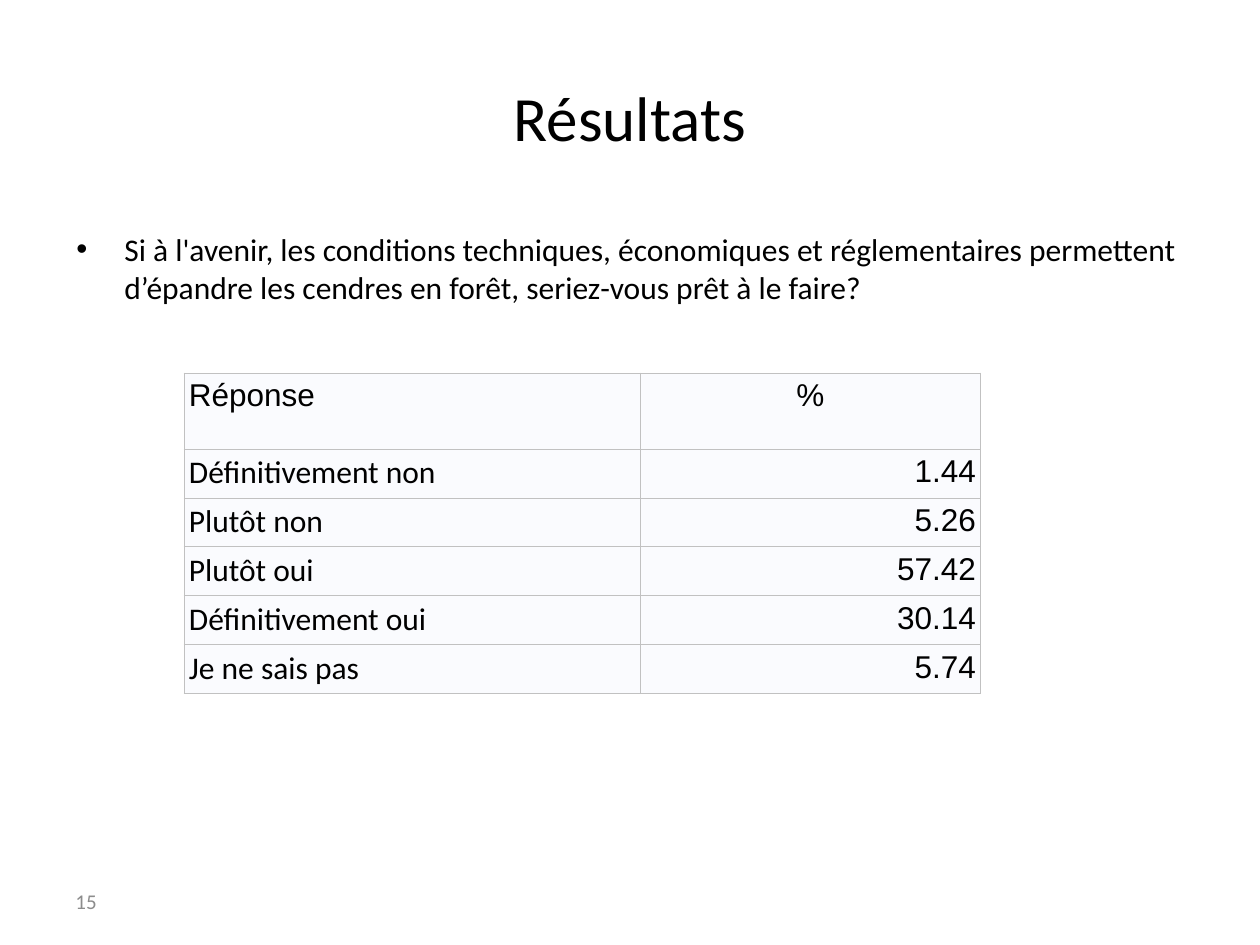
"""Build the survey results slide with its answer table."""
import pptx
import pptx.util
import pptx.dml.color
import pptx.enum.text
import pptx.oxml.ns
import lxml.etree

SCALE = 914400 // 126
ALIGN = pptx.enum.text.PP_ALIGN
ANCHOR = pptx.enum.text.MSO_ANCHOR
ROWS = [
    ("Réponse", "%"),
    ("Définitivement non", "1.44"),
    ("Plutôt non", "5.26"),
    ("Plutôt oui", "57.42"),
    ("Définitivement oui", "30.14"),
    ("Je ne sais pas", "5.74"),
]


def px(count):
    return pptx.util.Emu(count * SCALE)


def color(code):
    return pptx.dml.color.RGBColor.from_string(code)


def child(node, tag, **attrs):
    return lxml.etree.SubElement(node, pptx.oxml.ns.qn(tag), **attrs)


def add_run(para, text, size, font="Calibri", ink="000000"):
    run = para.add_run()
    run.text = text
    run.font.size = pptx.util.Pt(size)
    run.font.name = font
    run.font.color.rgb = color(ink)


def add_text(slide, box, text, size, ink="000000", align=ALIGN.LEFT, anchor=ANCHOR.MIDDLE):
    frame = slide.shapes.add_textbox(*map(px, box)).text_frame
    frame.word_wrap = True
    frame.vertical_anchor = anchor
    para = frame.paragraphs[0]
    para.alignment = align
    add_run(para, text, size, ink=ink)
    return para


def add_bullet(para, indent):
    para.space_before = pptx.util.Pt(3.6)
    props = para._p.get_or_add_pPr()
    props.set("marL", str(px(indent)))
    props.set("indent", str(px(-indent)))
    child(props, "a:buFont", typeface="Arial")
    child(props, "a:buChar", char="•")


def add_edges(cell, ink, width):
    props = cell._tc.get_or_add_tcPr()
    for spot, side in enumerate(("L", "R", "T", "B")):
        line = child(props, f"a:ln{side}", w=str(pptx.util.Pt(width)))
        child(child(line, "a:solidFill"), "a:srgbClr", val=ink)
        props.insert(spot, line)


def fill_cell(cell, text, font, align):
    cell.margin_left = cell.margin_right = px(5)
    cell.margin_top = cell.margin_bottom = px(5)
    cell.fill.solid()
    cell.fill.fore_color.rgb = color("FAFBFE")
    para = cell.text_frame.paragraphs[0]
    para.alignment = align
    add_run(para, text, 18, font)
    add_edges(cell, "C1C1C1", 0.6)


def add_table(slide, left, top, widths, heights):
    box = map(px, (left, top, sum(widths), sum(heights)))
    table = slide.shapes.add_table(len(heights), len(widths), *box).table
    table.first_row = table.horz_banding = False
    for col, width in zip(table.columns, widths):
        col.width = px(width)
    for row, height in zip(table.rows, heights):
        row.height = px(height)
    for num, (label, value) in enumerate(ROWS):
        head = num == 0
        fill_cell(table.cell(num, 0), label, "Arial" if head else "Calibri", ALIGN.LEFT)
        fill_cell(table.cell(num, 1), value, "Arial", ALIGN.CENTER if head else ALIGN.RIGHT)


def main():
    deck = pptx.Presentation()
    deck.slide_width, deck.slide_height = px(1260), px(945)
    slide = deck.slides.add_slide(deck.slide_layouts[6])
    add_text(slide, (63, 38, 1134, 157), "Résultats", 36, align=ALIGN.CENTER)
    query = add_text(
        slide, (64, 224, 1134, 624),
        "Si à l'avenir, les conditions techniques, économiques et réglementaires "
        "permettent d’épandre les cendres en forêt, seriez-vous prêt à le faire?",
        18, anchor=ANCHOR.TOP)
    add_bullet(query, 48)
    add_text(slide, (63, 876, 294, 50), "15", 12, "8C8C8C")
    add_table(slide, 184, 373, [456, 341], [76] + [49] * (len(ROWS) - 1))
    deck.save("out.pptx")


if __name__ == "__main__":
    main()
